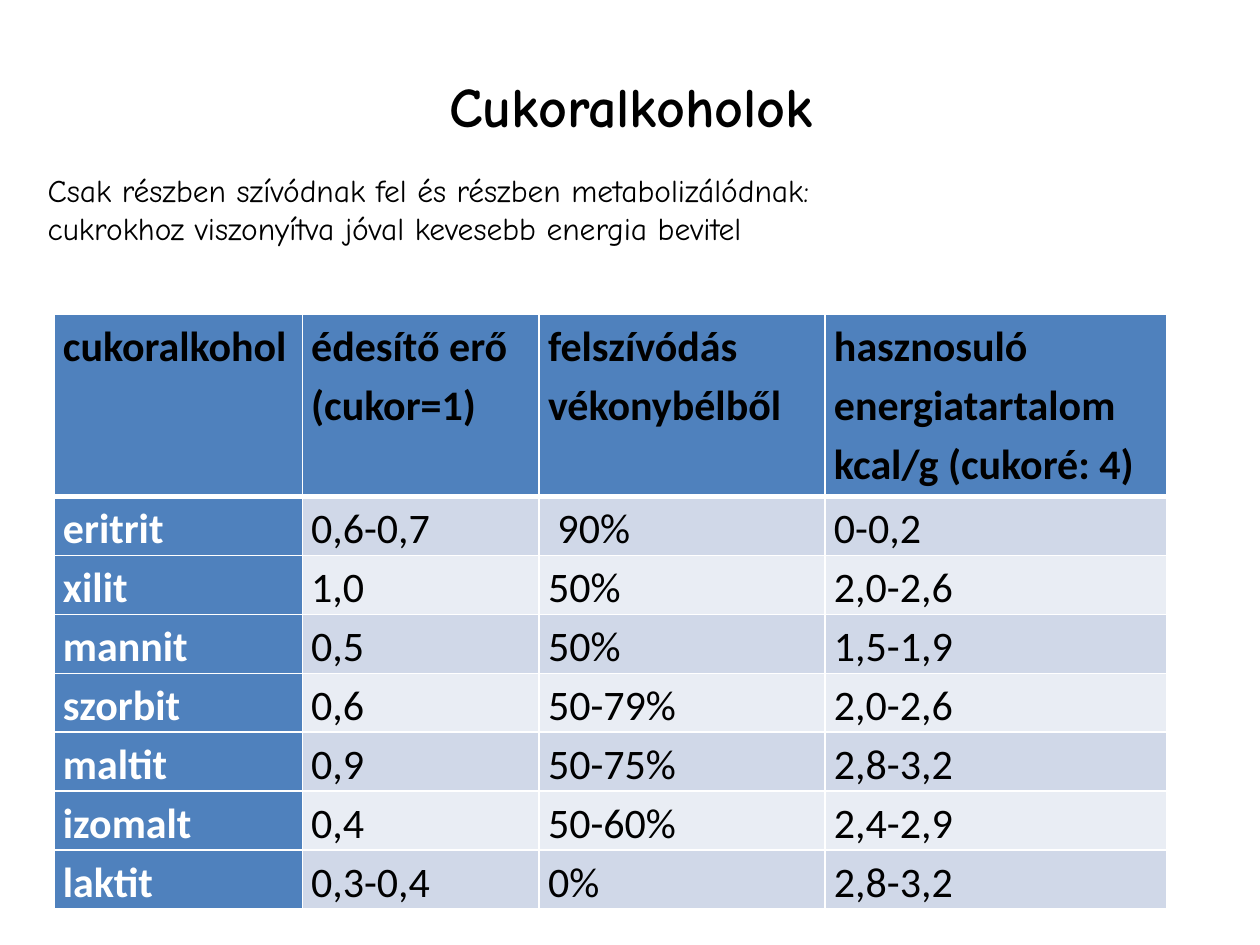
from pptx import Presentation, util as u
from pptx.dml import color
from pptx.enum import text
from pptx.oxml import parse_xml, ns

HEAD = ["cukoralkohol", "édesítő erő (cukor=1)", "felszívódás vékonybélből",
        "hasznosuló energiatartalom kcal/g (cukoré: 4)"]
ROWS = [
    ["eritrit", "0,6-0,7", " 90%", "0-0,2"],
    ["xilit", "1,0", "50%", "2,0-2,6"],
    ["mannit", "0,5", "50%", "1,5-1,9"],
    ["szorbit", "0,6", "50-79%", "2,0-2,6"],
    ["maltit", "0,9", "50-75%", "2,8-3,2"],
    ["izomalt", "0,4", "50-60%", "2,4-2,9"],
    ["laktit", "0,3-0,4", "0%", "2,8-3,2"],
]


def tint(code):
    return color.RGBColor.from_string(code)


class Deck:
    """Slide builder on a grid of 100 columns by 75 rows."""

    black, white, blue = "000000", "FFFFFF", "4F81BD"
    bands = ["D0D8E8", "E9EDF4"]
    hand, sans = "Comic Neue", "Calibri"

    def __init__(self):
        self.prs = Presentation()
        self.prs.slide_width, self.prs.slide_height = u.Inches(10), u.Inches(7.5)
        self.unit = self.prs.slide_width / 100
        self.slide = self.prs.slides.add_slide(self.prs.slide_layouts[5])

    def span(self, *nums):
        return [u.Emu(round(n * self.unit)) for n in nums]

    def font(self, para, name, size, code, bold=False):
        font = para.font
        font.name, font.size, font.bold = name, u.Pt(size), bold
        font.color.rgb = tint(code)

    def title(self, words, *box):
        shape = self.slide.shapes.title
        shape.left, shape.top, shape.width, shape.height = self.span(*box)
        frame = shape.text_frame
        frame.text = words
        frame.vertical_anchor = text.MSO_ANCHOR.MIDDLE
        para = frame.paragraphs[0]
        para.alignment = text.PP_ALIGN.CENTER
        self.font(para, self.hand, 32, self.black, True)

    def note(self, lines, *box):
        frame = self.slide.shapes.add_textbox(*self.span(*box)).text_frame
        frame.word_wrap = True
        frame.text = "\n".join(lines)
        for para in frame.paragraphs:
            self.font(para, self.hand, 18, self.black)

    def edge(self, cell, **sides):
        for side, width in sides.items():
            cell._tc.get_or_add_tcPr().append(parse_xml(
                f'<a:ln{side} {ns.nsdecls("a")} w="{u.Pt(width)}"><a:solidFill>'
                f'<a:srgbClr val="{self.white}"/></a:solidFill></a:ln{side}>'))

    def cell(self, cell, words, row, col):
        self.edge(cell, L=1, R=1, T=3 if row == 1 else 1, B=1 if row else 3)
        cell.fill.solid()
        dark = row == 0 or col == 0
        cell.fill.fore_color.rgb = tint(self.blue if dark else self.bands[(row - 1) % 2])
        cell.margin_left, cell.margin_right = self.span(0.7, 0.7)
        cell.margin_top = cell.margin_bottom = 0
        cell.text = words
        para = cell.text_frame.paragraphs[0]
        para.line_spacing = 1.15
        self.font(para, self.sans, 24, self.white if row and not col else self.black, dark)

    def table(self, data, left, top, widths, heights):
        box = self.span(left, top, sum(widths), sum(heights))
        grid = self.slide.shapes.add_table(len(data), len(widths), *box).table
        for col, size in zip(grid.columns, self.span(*widths)):
            col.width = size
        for row, size in zip(grid.rows, self.span(*heights)):
            row.height = size
        for r, line in enumerate(data):
            for c, words in enumerate(line):
                self.cell(grid.cell(r, c), words, r, c)


def main():
    deck = Deck()
    deck.title("Cukoralkoholok", 5.1, 2.1, 90, 12.5)
    deck.table([HEAD] + ROWS, 4.3, 24.9, [19.7, 18.8, 22.7, 27.1],
               [14.5] + [4.4] * len(ROWS))
    deck.note(["Csak részben szívódnak fel és részben metabolizálódnak:",
               "cukrokhoz viszonyítva jóval kevesebb energia bevitel"],
              2.8, 13.1, 93.7, 10.1)
    deck.prs.save("out.pptx")


if __name__ == "__main__":
    main()
